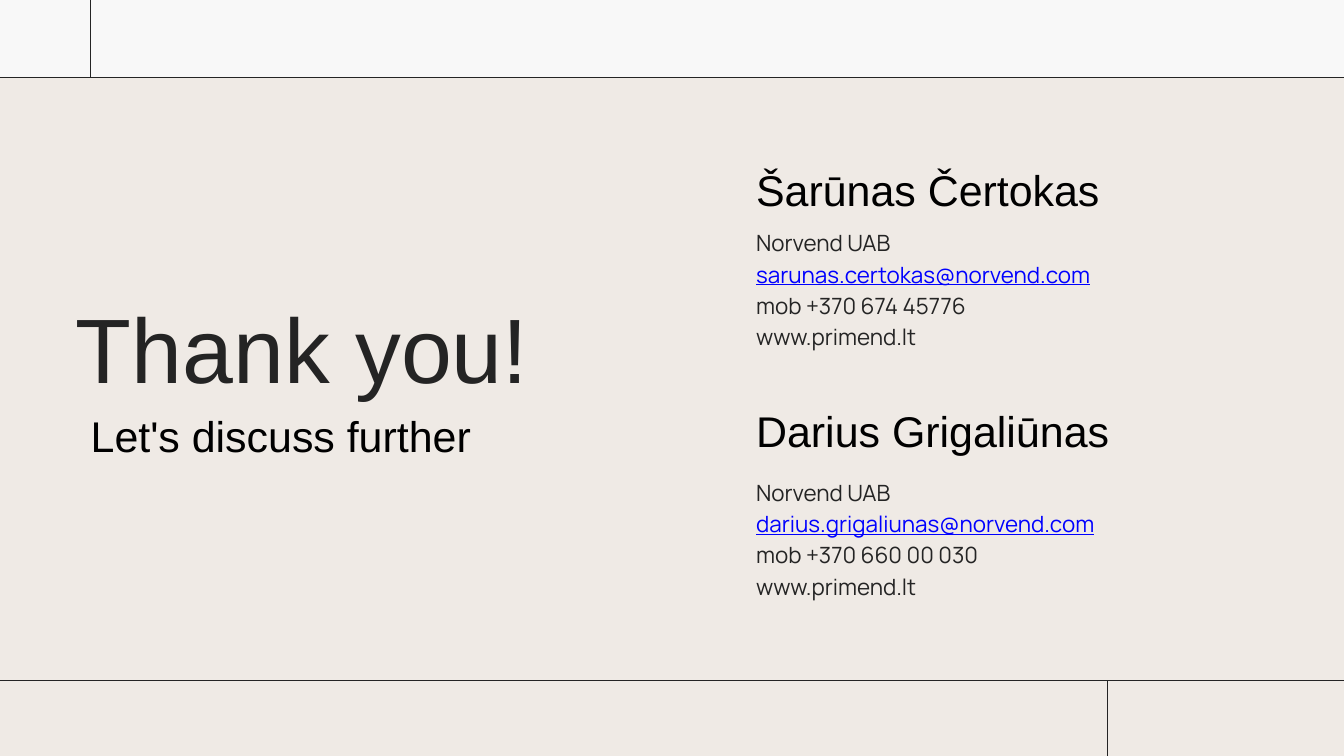
from lxml import etree
from pptx import Presentation
from pptx.dml.color import RGBColor
from pptx.enum.shapes import MSO_CONNECTOR, MSO_SHAPE
from pptx.enum.text import MSO_ANCHOR, MSO_AUTO_SIZE, PP_ALIGN
from pptx.oxml.ns import qn
from pptx.util import Cm, Pt

RECT = MSO_SHAPE.RECTANGLE
STRAIGHT = MSO_CONNECTOR.STRAIGHT
TOP = MSO_ANCHOR.TOP
NO_FIT = MSO_AUTO_SIZE.NONE
LEFT = PP_ALIGN.LEFT

SAND = RGBColor(0xEF, 0xEA, 0xE5)
PALE = RGBColor(0xF8, 0xF8, 0xF8)
INK = RGBColor(0x24, 0x24, 0x24)
BLACK = RGBColor(0, 0, 0)
BLUE = RGBColor(0, 0, 0xFF)

WIDE, HIGH = 50.8, 28.58
HEAD, FOOT = 2.93, 25.72
RIGHT = 28.58

PEOPLE = [
    # name top, details top, name, email, mobile
    (5.87, 8.51, "Šarūnas Čertokas", "sarunas.certokas@norvend.com", "mob +370 674 45776"),
    (14.96, 17.93, "Darius Grigaliūnas", "darius.grigaliunas@norvend.com", "mob +370 660 00 030"),
]


class Deck:
    def __init__(self):
        self.file = Presentation()
        self.file.slide_width, self.file.slide_height = Cm(WIDE), Cm(HIGH)
        self.slide = self.file.slides.add_slide(self.file.slide_layouts[5])
        fill = self.slide.background.fill
        fill.solid()
        fill.fore_color.rgb = SAND

    def band(self, x, y, w, h, color):
        shape = self.slide.shapes.add_shape(RECT, Cm(x), Cm(y), Cm(w), Cm(h))
        shape.shadow.inherit = False
        shape.fill.solid()
        shape.fill.fore_color.rgb = color
        shape.line.fill.background()

    def rule(self, x1, y1, x2, y2):
        line = self.slide.shapes.add_connector(STRAIGHT, Cm(x1), Cm(y1), Cm(x2), Cm(y2))
        line.line.color.rgb = INK
        line.line.width = Pt(0.75)
        etree.SubElement(line.element.spPr, qn("a:effectLst"))

    def put(self, shape, lines, size, font, lead=1.4):
        """Fill a shape with (text, colour) lines; lead is a multiple of size."""
        frame = shape.text_frame
        frame.word_wrap = True
        frame.auto_size = NO_FIT
        frame.vertical_anchor = TOP
        frame.margin_left = frame.margin_right = 0
        frame.margin_top = frame.margin_bottom = 0
        for i, (text, color) in enumerate(lines):
            para = frame.add_paragraph() if i else frame.paragraphs[0]
            para.alignment = LEFT
            para.line_spacing = Pt(round(size * lead, 1))
            run = para.add_run()
            run.text = text
            run.font.size = Pt(size)
            run.font.name = font
            run.font.color.rgb = color
            run.font.underline = color == BLUE

    def title(self, x, y, w, h, text):
        shape = self.slide.shapes.title
        shape.left, shape.top, shape.width, shape.height = Cm(x), Cm(y), Cm(w), Cm(h)
        self.put(shape, [(text, INK)], 98, "Arial", 0.96)

    def text(self, x, y, w, h, lines, size, font):
        box = self.slide.shapes.add_textbox(Cm(x), Cm(y), Cm(w), Cm(h))
        self.put(box, lines, size, font)


def main():
    deck = Deck()
    deck.band(0, 0, WIDE, HEAD, PALE)
    deck.rule(0, HEAD, WIDE, HEAD)
    deck.rule(3.42, 0, 3.42, HEAD)
    deck.rule(0, FOOT, WIDE, FOOT)
    deck.rule(41.87, FOOT, 41.87, HIGH)

    deck.title(2.87, 11.86, 21.44, 3.53, "Thank you!")
    deck.text(3.43, 15.16, 22.86, 2.16, [("Let's discuss further", BLACK)], 46, "Arial")

    for top, below, name, mail, phone in PEOPLE:
        deck.text(RIGHT, top, 22.86, 2.03, [(name, BLACK)], 46, "Arial")
        lines = [("Norvend UAB", INK), (mail, BLUE), (phone, INK), ("www.primend.lt", INK)]
        deck.text(RIGHT, below, 20.07, 6.05, lines, 24, "Manrope")

    deck.file.save("out.pptx")


if __name__ == "__main__":
    main()
